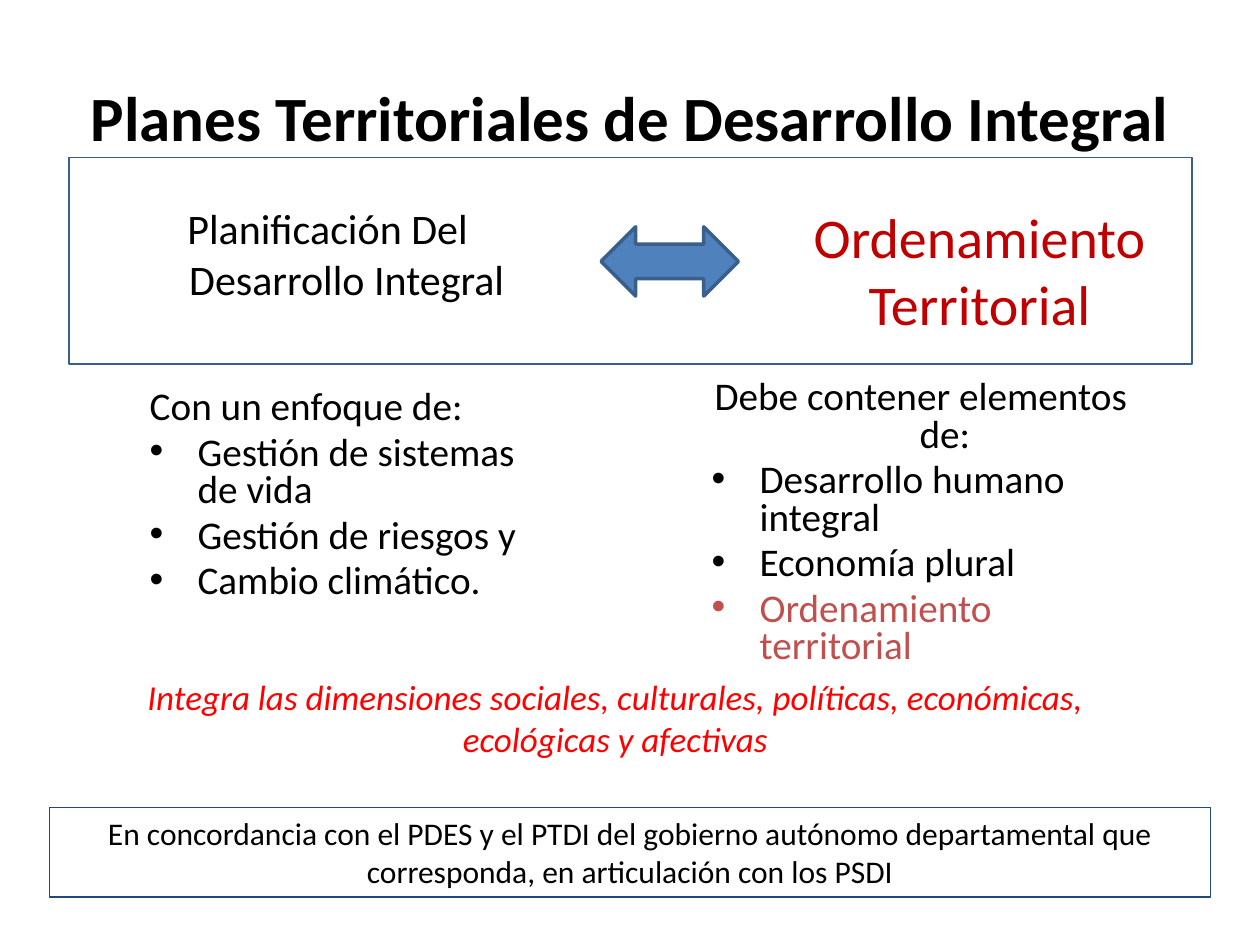
from lxml import etree
from pptx import Presentation
from pptx.dml.color import RGBColor
from pptx.enum.shapes import MSO_SHAPE
from pptx.enum.text import MSO_ANCHOR, PP_ALIGN
from pptx.oxml.ns import qn
from pptx.util import Inches, Pt

LEFT, CENTER = PP_ALIGN.LEFT, PP_ALIGN.CENTER
TOP, MIDDLE = MSO_ANCHOR.TOP, MSO_ANCHOR.MIDDLE
RECTANGLE, DOUBLE_ARROW = MSO_SHAPE.RECTANGLE, MSO_SHAPE.LEFT_RIGHT_ARROW

FONT = "Calibri"
BLACK, WHITE = "000000", "FFFFFF"
RED, DARK_RED, SOFT_RED = "FF0000", "C00000", "C0504D"
BLUE, BORDER_BLUE, NAVY = "4F81BD", "3A5F8C", "1F497D"
HANGING = 0.38

TITLE = "Planes Territoriales de Desarrollo Integral"
PLANNING = "Planificación Del Desarrollo Integral "
ZONING = "Ordenamiento Territorial"
DIMENSIONS = [
    "Integra las dimensiones sociales, culturales, políticas, económicas,",
    "ecológicas y afectivas",
]
AGREEMENT = (
    "En concordancia con el PDES y el PTDI del gobierno autónomo departamental que "
    "corresponda, en articulación con los PSDI"
)
LISTS = [
    ((5.55, 2.97, 3.52, 2.58), CENTER, "Debe contener elementos de:", [
        ("Desarrollo humano integral", BLACK),
        ("Economía plural", BLACK),
        ("Ordenamiento territorial", SOFT_RED),
    ]),
    ((1.09, 3.05, 3.44, 1.95), LEFT, "Con un enfoque de:", [
        ("Gestión de sistemas de vida", BLACK),
        ("Gestión de riesgos y", BLACK),
        ("Cambio climático.", BLACK),
    ]),
]


def color(value):
    return RGBColor.from_string(value)


def add_text_box(slide, box, anchor=TOP):
    frame = slide.shapes.add_textbox(*map(Inches, box)).text_frame
    frame.word_wrap = True
    frame.vertical_anchor = anchor
    return frame


def add_shape(slide, kind, box, line, width, fill=None):
    shape = slide.shapes.add_shape(kind, *map(Inches, box))
    shape.shadow.inherit = False
    shape.line.color.rgb = color(line)
    shape.line.width = Pt(width)
    if fill:
        shape.fill.solid()
        shape.fill.fore_color.rgb = color(fill)
    else:
        shape.fill.background()
    return shape


def write(frame, text, size, ink=BLACK, align=CENTER, hanging=False, bullet=False,
          bold=False, italic=False):
    first = not frame.paragraphs[0].runs
    paragraph = frame.paragraphs[0] if first else frame.add_paragraph()
    paragraph.alignment = align
    if hanging:
        properties = paragraph._p.get_or_add_pPr()
        properties.set("marL", str(Inches(HANGING)))
        properties.set("indent", str(-Inches(HANGING)))
        if bullet:
            etree.SubElement(properties, qn("a:buFont"), typeface="Arial")
            etree.SubElement(properties, qn("a:buChar"), char="•")
    run = paragraph.add_run()
    run.text = text
    font = run.font
    font.name, font.size, font.bold, font.italic = FONT, Pt(size), bold, italic
    font.color.rgb = color(ink)
    return paragraph


def add_list(slide, box, align, heading, items):
    frame = add_text_box(slide, box)
    write(frame, heading, 22.4, align=align, hanging=True).line_spacing = 0.8
    for text, ink in items:
        paragraph = write(frame, text, 22.4, ink, LEFT, hanging=True, bullet=True)
        paragraph.line_spacing = 0.8
        paragraph.space_before = Pt(4.5)


def main():
    """Build the slide on territorial development plans."""
    presentation = Presentation()
    presentation.slide_width, presentation.slide_height = Inches(10), Inches(7.5)
    slide = presentation.slides.add_slide(presentation.slide_layouts[6])

    for content in LISTS:
        add_list(slide, *content)

    write(add_text_box(slide, (0.67, 1.56, 3.86, 0.91)), PLANNING, 24, hanging=True)
    write(add_text_box(slide, (6.25, 1.56, 3.05, 1.18)), ZONING, 32, DARK_RED)
    add_shape(slide, DOUBLE_ARROW, (4.77, 1.8, 1.09, 0.55), BORDER_BLUE, 2, BLUE)
    add_shape(slide, RECTANGLE, (0.55, 1.25, 8.91, 1.64), BORDER_BLUE, 1)

    dimensions = add_text_box(slide, (0.55, 5.31, 8.67, 0.77))
    for line in DIMENSIONS:
        write(dimensions, line, 20, RED, italic=True)

    agreement = add_shape(slide, RECTANGLE, (0.39, 6.41, 9.22, 0.71), NAVY, 0.75, WHITE)
    fill_color = agreement._element.spPr.find(qn("a:solidFill")).find(qn("a:srgbClr"))
    etree.SubElement(fill_color, qn("a:alpha"), val="56000")
    agreement.text_frame.word_wrap = True
    agreement.text_frame.vertical_anchor = TOP
    write(agreement.text_frame, AGREEMENT, 18)

    write(add_text_box(slide, (0.5, 0.3, 9, 1.25), MIDDLE), TITLE, 36, bold=True)
    presentation.save("out.pptx")


if __name__ == "__main__":
    main()
